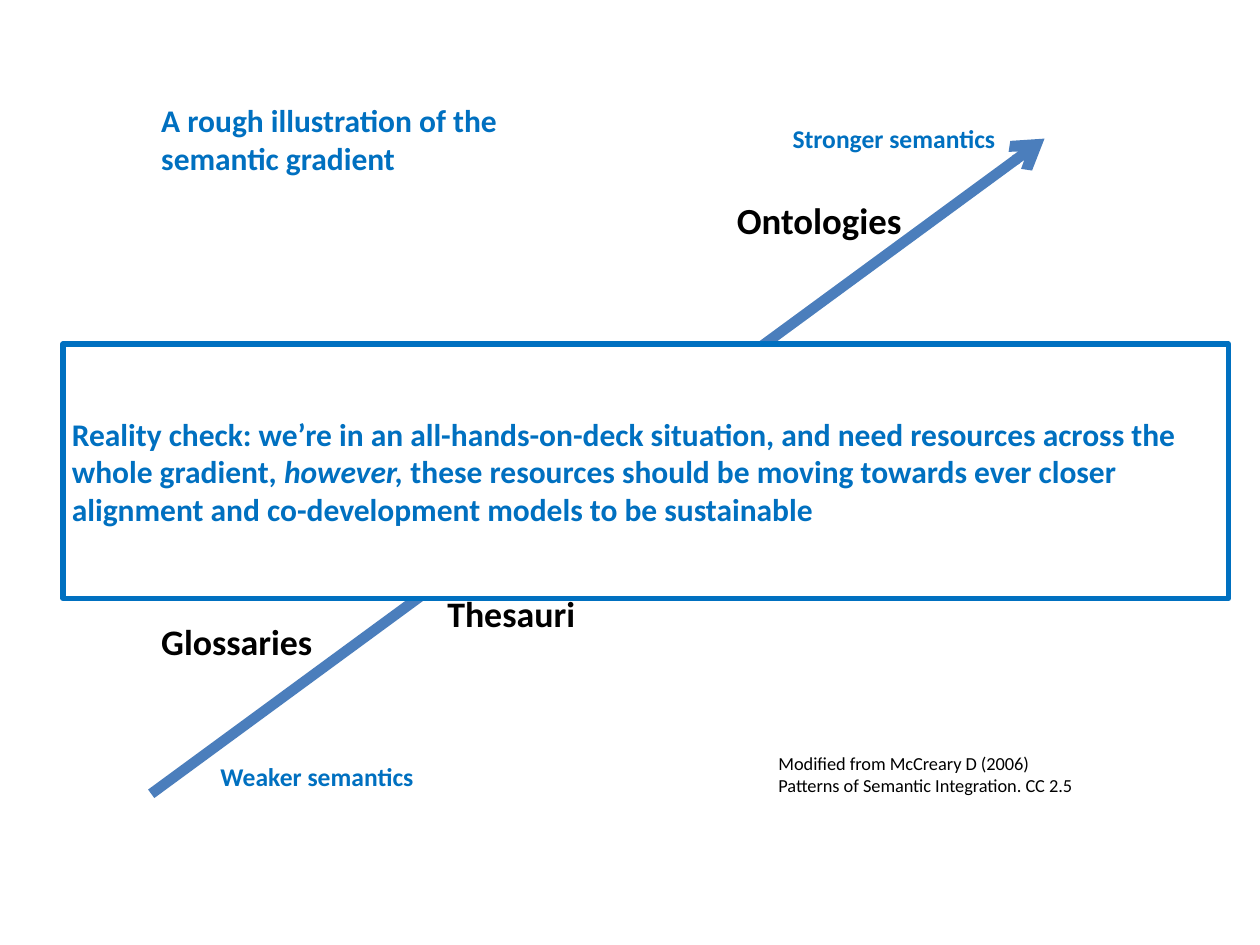
"""Build a slide on the semantic gradient, with a reality check across it."""
import pptx
import pptx.dml.color
import pptx.enum.shapes
import pptx.enum.text
import pptx.oxml.ns
import pptx.util
from lxml import etree

Inches = pptx.util.Inches
Pt = pptx.util.Pt
BLUE, BLACK = "0070C0", "000000"


def color(code):
    return pptx.dml.color.RGBColor.from_string(code)


def write(shape, paras, size, code, bold=True, inset=(0.07, 0.04), anchor="MIDDLE"):
    frame = shape.text_frame
    frame.word_wrap = True
    frame.vertical_anchor = pptx.enum.text.MSO_ANCHOR[anchor]
    frame.margin_left = frame.margin_right = Inches(inset[0])
    frame.margin_top = frame.margin_bottom = Inches(inset[1])
    for i, runs in enumerate(paras):
        para = frame.add_paragraph() if i else frame.paragraphs[0]
        para.alignment = pptx.enum.text.PP_ALIGN.LEFT
        for text, slant in runs:
            run = para.add_run()
            run.text = text
            run.font.name = "Calibri"
            run.font.size = Pt(size)
            run.font.bold = bold
            run.font.italic = slant
            run.font.color.rgb = color(code)


deck = pptx.Presentation()
deck.slide_width, deck.slide_height = Inches(10), Inches(7.5)
slide = deck.slides.add_slide(deck.slide_layouts[6])
shapes = slide.shapes

title = shapes.add_textbox(Inches(5.75), Inches(1.51), Inches(2.24), Inches(0.47))
write(title, [[("Ontologies", False)]], 21, BLACK, inset=(0.1, 0.05))

arrow = shapes.add_connector(
    pptx.enum.shapes.MSO_CONNECTOR.STRAIGHT,
    Inches(1.2), Inches(6.3), Inches(8.29), Inches(1.1))
arrow.line.color.rgb = color("4B7EBC")
arrow.line.width = Pt(6)
qn = pptx.oxml.ns.qn
etree.SubElement(arrow.line._get_or_add_ln(), qn("a:tailEnd"), type="arrow")
etree.SubElement(arrow._element.spPr, qn("a:effectLst"))

labels = [
    ("Thesauri", 3.48, 4.63, 1.77, 20.5, BLACK),
    ("Glossaries", 1.21, 4.85, 1.77, 20.5, BLACK),
    ("A rough illustration of the semantic gradient", 1.21, 0.87, 3.6, 18, BLUE),
    ("Weaker semantics", 1.68, 5.93, 3.6, 14.6, BLUE),
    ("Stronger semantics", 6.22, 0.86, 3.6, 14.6, BLUE),
]
for text, left, top, width, size, code in labels:
    box = shapes.add_textbox(Inches(left), Inches(top), Inches(width), Inches(0.47))
    write(box, [[(text, False)]], size, code)

credit = shapes.add_textbox(Inches(6.08), Inches(5.92), Inches(2.59), Inches(0.63))
lines = ["Modified from McCreary D\u00a0(2006)", "Patterns of Semantic Integration. CC 2.5"]
write(credit, [[(line, False)] for line in lines], 10.5, BLACK,
      bold=False, inset=(0.1, 0.05), anchor="TOP")
credit.text_frame.word_wrap = False

check = shapes.add_shape(
    pptx.enum.shapes.MSO_SHAPE.RECTANGLE,
    Inches(0.5), Inches(2.73), Inches(9.25), Inches(2.02))
check.shadow.inherit = False
check.fill.solid()
check.fill.fore_color.rgb = color("FFFFFF")
check.line.color.rgb = color(BLUE)
check.line.width = Pt(3)
write(check, [[
    ("Reality check: we’re in an all-hands-on-deck situation, "
     "and need resources across the whole gradient, ", False),
    ("however,", True),
    (" these resources should be moving towards ever closer "
     "alignment and co-development models to be sustainable", False),
]], 18, BLUE)

deck.save("out.pptx")
